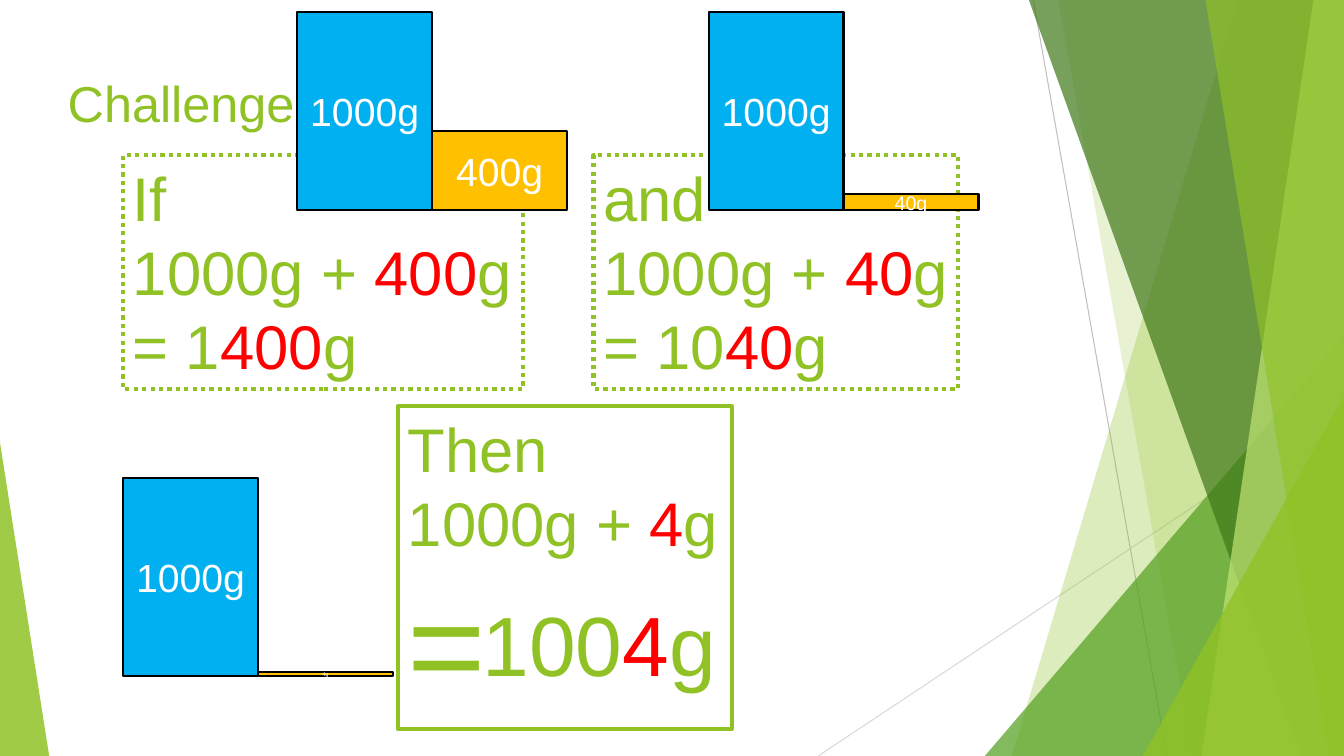
from typing import NamedTuple

from pptx import Presentation
from pptx import util as u
from pptx.dml.color import RGBColor
from pptx.enum import dml, shapes, text
from pptx.oxml.ns import qn
from pptx.util import Cm

GREEN = RGBColor(0x90, 0xC2, 0x26)
MID_GREEN = RGBColor(0x54, 0xA0, 0x21)
DARK_GREEN = RGBColor(0x3F, 0x78, 0x19)
PALE_GREEN = RGBColor(0xC0, 0xE4, 0x74)
RED = RGBColor(0xFF, 0, 0)
BLUE = RGBColor(0, 0xB0, 0xF0)
AMBER = RGBColor(0xFF, 0xC0, 0)
BLACK = RGBColor(0, 0, 0)
WHITE = RGBColor(0xFF, 0xFF, 0xFF)
GREY = RGBColor(0xBF, 0xBF, 0xBF)
LIGHT_GREY = RGBColor(0xD9, 0xD9, 0xD9)

WIDTH, HEIGHT = 33.87, 19.05
BAR_WIDTH, BAR_HEIGHT = 3.4, 5.0


class Ray(NamedTuple):
    start: tuple[float, float]
    end: tuple[float, float]
    color: RGBColor


class Band(NamedTuple):
    """A facet from the top to the bottom edge, reaching the right edge."""
    top_x: float
    bottom_x: float
    color: RGBColor
    opacity: int


class Corner(NamedTuple):
    """A right triangle standing on the bottom edge."""
    left: float
    top: float
    width: float
    peak: float
    color: RGBColor
    opacity: int


class Sum(NamedTuple):
    """Lines of text, each split so that its second part is red."""
    left: float
    top: float
    width: float
    height: float
    lines: list[tuple[str, ...]]
    size: int = 44
    border: bool = True
    dotted: bool = False
    last_size: int | None = None


class Bars(NamedTuple):
    left: float
    top: float
    small_height: float
    label: str
    size: int


RAYS = [
    Ray((26.04, 0), (29.41, HEIGHT), GREY),
    Ray((WIDTH, 10.24), (20.62, HEIGHT), LIGHT_GREY),
]
FACETS = [
    Band(31.19, 25.5, GREEN, 30),
    Band(26.67, 30.05, GREEN, 20),
    Corner(24.82, 8.46, 9.05, 1, MID_GREEN, 72),
    Band(25.93, 32.79, DARK_GREEN, 70),
    Band(33.1, 30.28, PALE_GREEN, 70),
    Band(30.38, 33.48, GREEN, 65),
    Corner(28.8, 9.98, 5.07, 1, GREEN, 80),
    Corner(0, 11.15, 1.24, 0, GREEN, 85),
]
SUMS = [
    Sum(3.1, 3.91, 10.08, 5.89,
        [("If",), ("1000g + ", "400", "g"), ("= 1", "400", "g")], dotted=True),
    Sum(14.96, 3.91, 9.19, 5.89,
        [("and",), ("1000g + ", "40", "g"), ("= 10", "40", "g")], dotted=True),
    Sum(10.03, 10.24, 8.41, 8.13,
        [("Then",), ("1000g + ", "4", "g"), ("=",)], last_size=96),
    Sum(11.91, 14.81, 6.45, 2.82, [("100", "4", "g")], size=60, border=False),
]
BARS = [
    Bars(7.49, 0.3, 2.0, "400g", 28),
    Bars(17.86, 0.3, 0.4, "40g", 14),
    Bars(3.1, 12.04, 0.1, "4g", 4),
]


def add_run(p, words: str, *, size: float, color: RGBColor) -> None:
    r = p.add_run()
    r.text = words
    r.font.name = "Arial"
    r.font.size = u.Pt(size)
    r.font.color.rgb = color


def fill_facet(sp, color: RGBColor, opacity: int) -> None:
    sp.shadow.inherit = False
    sp.fill.solid()
    sp.fill.fore_color.rgb = color
    sp.line.fill.background()
    clr = sp.fill._xPr.find(qn("a:solidFill"))[0]
    clr.makeelement(qn("a:alpha"), {})
    alpha = clr.makeelement(qn("a:alpha"), {"val": str(opacity * 1000)})
    clr.append(alpha)


def draw_ray(s, ray: Ray) -> None:
    line = s.shapes.add_connector(shapes.MSO_CONNECTOR.STRAIGHT,
                                  *map(Cm, ray.start + ray.end))
    line.line.color.rgb = ray.color
    line.line.width = u.Pt(0.75)
    sp_pr = line._element.spPr
    sp_pr.append(sp_pr.makeelement(qn("a:effectLst"), {}))


def draw_facet(s, facet: Band | Corner) -> None:
    if isinstance(facet, Band):
        outline = s.shapes.build_freeform(Cm(facet.top_x), 0)
        outline.add_line_segments([(Cm(WIDTH), 0), (Cm(WIDTH), Cm(HEIGHT)),
                                   (Cm(facet.bottom_x), Cm(HEIGHT))])
        sp = outline.convert_to_shape()
    else:
        sp = s.shapes.add_shape(
            shapes.MSO_SHAPE.ISOSCELES_TRIANGLE, Cm(facet.left), Cm(facet.top),
            Cm(facet.width), Cm(HEIGHT - facet.top))
        sp.adjustments[0] = facet.peak
    fill_facet(sp, facet.color, facet.opacity)


def draw_sum(s, box: Sum) -> None:
    sp = s.shapes.add_textbox(*map(Cm, box[:4]))
    if box.border:
        sp.line.color.rgb = GREEN
        sp.line.width = u.Pt(3)
    if box.dotted:
        sp.line.dash_style = dml.MSO_LINE.ROUND_DOT
    tf = sp.text_frame
    tf.word_wrap = False
    tf.auto_size = text.MSO_AUTO_SIZE.SHAPE_TO_FIT_TEXT
    for i, parts in enumerate(box.lines):
        p = tf.add_paragraph() if i else tf.paragraphs[0]
        is_last = i == len(box.lines) - 1
        size = box.last_size if is_last and box.last_size else box.size
        for j, part in enumerate(parts):
            add_run(p, part, size=size, color=RED if j == 1 else GREEN)


def draw_bar(s, left: float, top: float, height: float, label: str, *,
             size: float, color: RGBColor) -> None:
    sp = s.shapes.add_shape(shapes.MSO_SHAPE.RECTANGLE, Cm(left), Cm(top),
                            Cm(BAR_WIDTH), Cm(height))
    sp.shadow.inherit = False
    sp.fill.solid()
    sp.fill.fore_color.rgb = color
    sp.line.color.rgb = BLACK
    sp.line.width = u.Pt(1.5)
    tf = sp.text_frame
    tf.vertical_anchor = text.MSO_ANCHOR.MIDDLE
    p = tf.paragraphs[0]
    p.alignment = text.PP_ALIGN.CENTER
    add_run(p, label, size=size, color=WHITE)


def draw_bars(s, bars: Bars) -> None:
    draw_bar(s, bars.left, bars.top, BAR_HEIGHT, "1000g", size=28, color=BLUE)
    draw_bar(s, bars.left + BAR_WIDTH, bars.top + BAR_HEIGHT - bars.small_height,
             bars.small_height, bars.label, size=bars.size, color=AMBER)


def draw_title(s) -> None:
    sp = s.shapes.title
    sp.left, sp.top, sp.width, sp.height = map(Cm, (1.45, 1.7, 23.88, 3.66))
    tf = sp.text_frame
    tf.vertical_anchor = text.MSO_ANCHOR.TOP
    p = tf.paragraphs[0]
    p.alignment = text.PP_ALIGN.LEFT
    add_run(p, "Challenge", size=36, color=GREEN)


def main() -> None:
    prs = Presentation()
    prs.slide_width, prs.slide_height = Cm(WIDTH), Cm(HEIGHT)
    s = prs.slides.add_slide(prs.slide_layouts[5])
    draw_title(s)
    for draw, items in ((draw_ray, RAYS), (draw_facet, FACETS),
                        (draw_sum, SUMS), (draw_bars, BARS)):
        for item in items:
            draw(s, item)
    prs.save("out.pptx")


if __name__ == "__main__":
    main()
